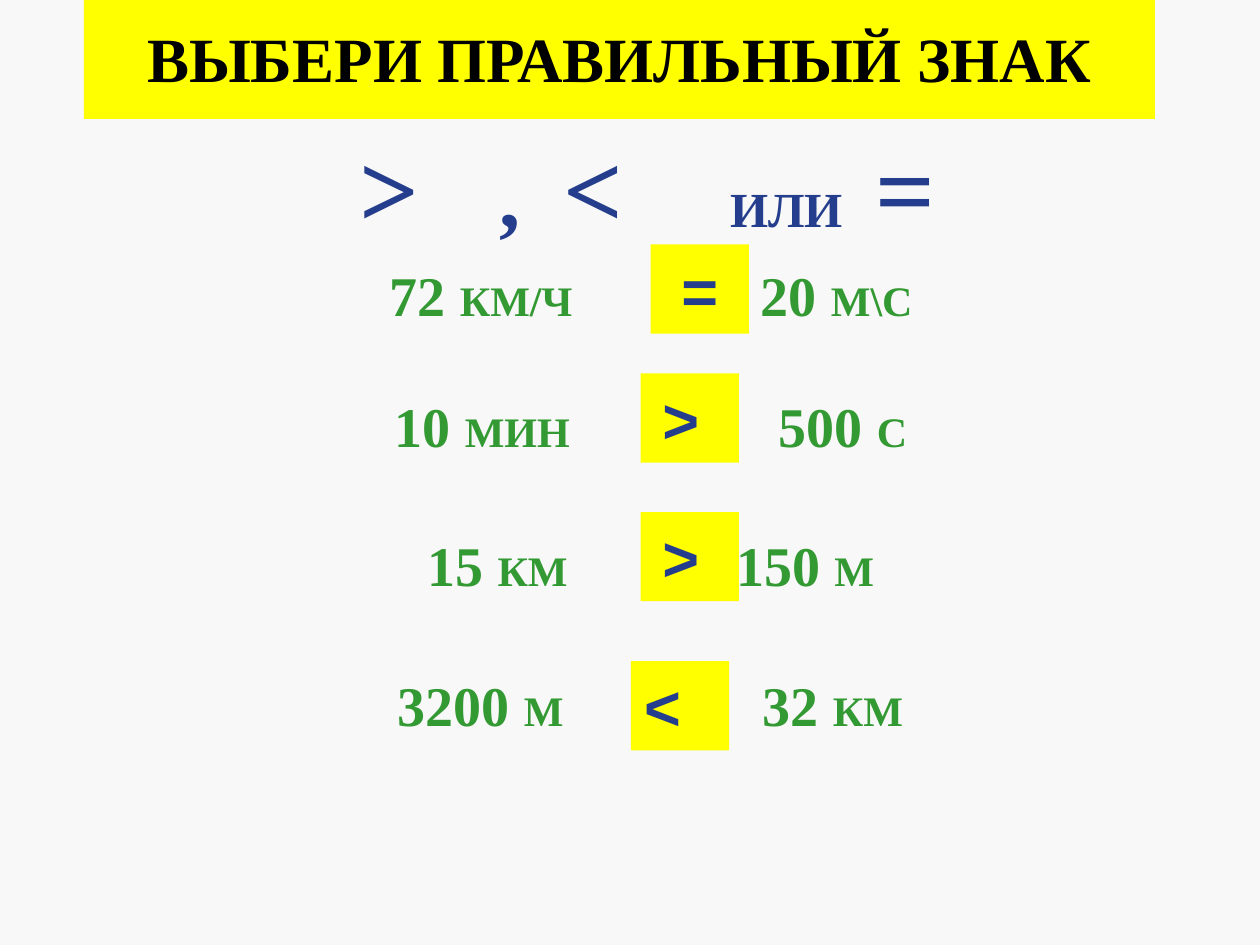
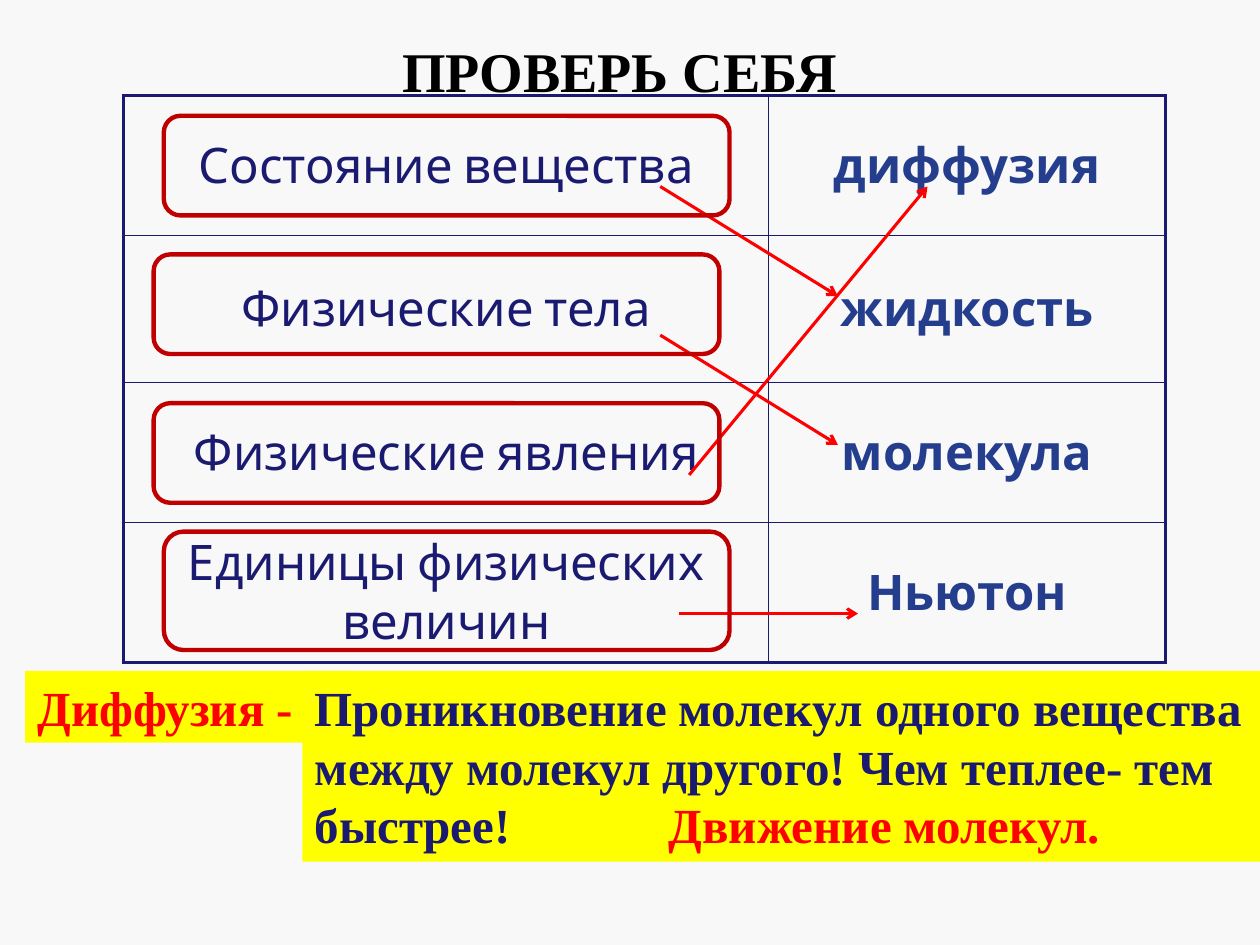
from typing import NamedTuple

from lxml import etree
from pptx import Presentation
from pptx.dml.color import RGBColor
from pptx.enum.shapes import MSO_CONNECTOR, MSO_SHAPE
from pptx.enum.text import MSO_ANCHOR, PP_ALIGN
from pptx.oxml.ns import qn
from pptx.util import Pt

RECT, ROUND = MSO_SHAPE.RECTANGLE, MSO_SHAPE.ROUNDED_RECTANGLE
STRAIGHT = MSO_CONNECTOR.STRAIGHT
LEFT, CENTER = PP_ALIGN.LEFT, PP_ALIGN.CENTER
TOP, MIDDLE = MSO_ANCHOR.TOP, MSO_ANCHOR.MIDDLE

COLORS = {
    "page": "F8F8F8", "band": "FFFF00", "title": "000000", "blue": "243D8C",
    "navy": "1A1A70", "green": "339933", "red": "FF0000", "frame": "C00000",
}
SERIF, SANS, TABLE_FONT = "Times New Roman", "Arial", "Cabin"


class Box(NamedTuple):
    x: float
    y: float
    w: float
    h: float


class Piece(NamedTuple):
    text: str
    size: float
    color: str


class Line(NamedTuple):
    before: float
    tabs: list[float]
    pieces: list[Piece]


class Answer(NamedTuple):
    sign: str
    x: float
    y: float
    shift: float  # moves the sign left of the centre


class Arrow(NamedTuple):
    x1: float
    y1: float
    x2: float
    y2: float


# Shared helpers
def rgb(name: str) -> RGBColor:
    return RGBColor.from_string(COLORS[name])


def style_run(r, size: float, color: str, font: str = SERIF, bold: bool = True) -> None:
    r.font.size, r.font.name, r.font.bold = Pt(size), font, bold
    r.font.color.rgb = rgb(color)


def add_slide(prs):
    s = prs.slides.add_slide(prs.slide_layouts[6])
    s.background.fill.solid()
    s.background.fill.fore_color.rgb = rgb("page")
    return s


def add_box(s, box: Box, fill: str = "", line: str = "", kind=RECT):
    sp = s.shapes.add_shape(kind, *map(Pt, box))
    sp.shadow.inherit = False
    if fill:
        sp.fill.solid()
        sp.fill.fore_color.rgb = rgb(fill)
    else:
        sp.fill.background()
    if line:
        sp.line.color.rgb = rgb(line)
        sp.line.width = Pt(2.5)
    else:
        sp.line.fill.background()
    return sp


def write(sp, piece: Piece, font: str = SERIF, align=CENTER, anchor=MIDDLE):
    tf = sp.text_frame
    tf.word_wrap = True
    tf.vertical_anchor = anchor
    tf.text = piece.text
    p = tf.paragraphs[0]
    p.alignment = align
    style_run(p.runs[0], piece.size, piece.color, font)
    return p


def add_pieces(p, pieces: list[Piece]) -> None:
    for piece in pieces:
        r = p.add_run()
        r.text = piece.text
        style_run(r, piece.size, piece.color)


def set_tabs(p, stops: list[float]) -> None:
    tabs = etree.SubElement(p._p.get_or_add_pPr(), qn("a:tabLst"))
    for stop in stops:
        etree.SubElement(tabs, qn("a:tab"), pos=str(Pt(stop)), algn="l")


def add_arrow(s, arrow: Arrow) -> None:
    c = s.shapes.add_connector(STRAIGHT, *map(Pt, arrow))
    c.line.color.rgb = rgb("red")
    c.line.width = Pt(1.75)
    etree.SubElement(c.line._get_or_add_ln(), qn("a:tailEnd"), type="arrow")
    etree.SubElement(c._element.spPr, qn("a:effectLst"))


def set_border(cell, side: str, width: float) -> None:
    ln = etree.Element(qn(f"a:ln{side}"), w=str(Pt(width)))
    fill = etree.SubElement(ln, qn("a:solidFill"))
    etree.SubElement(fill, qn("a:srgbClr"), val=COLORS["navy"])
    cell._tc.get_or_add_tcPr().insert("LRTB".index(side), ln)


# Slide 1: choose the right sign
def comparison(before: float, tabs: list[float], left: tuple[str, str],
               right: tuple[str, str]) -> Line:
    pieces = []
    for number, unit in (left, right):
        pieces += [Piece(f"\t{number} ", 32, "green"), Piece(unit, 24, "green")]
    return Line(before, tabs, pieces)


SIGNS = [(">", 60), (",", 48), ("<", 60), ("ИЛИ", 28), ("=", 60)]
LINES = [
    Line(0, [132, 212, 249, 344, 427],
         [Piece(f"\t{text}", size, "blue") for text, size in SIGNS]),
    comparison(7, [149.5, 361.5], ("72", "КМ/Ч"), ("20", "М\\С")),
    comparison(36.3, [152.3, 371.7], ("10", "МИН"), ("500", "С")),
    comparison(41.5, [171, 347.5], ("15", "КМ"), ("150", "М")),
    comparison(41.5, [154, 362.6], ("3200", "М"), ("32", "КМ")),
]
ANSWERS = [
    Answer("=", 371.8, 139.6, 0), Answer(">", 366, 213.4, 5),
    Answer(">", 366, 292.6, 5), Answer("<", 360.5, 377.8, 10),
]


def build_signs(prs) -> None:
    s = add_slide(prs)
    band = add_box(s, Box(48, -2, 612, 70), "band")
    write(band, Piece("ВЫБЕРИ ПРАВИЛЬНЫЙ ЗНАК", 36, "title"))

    tf = s.shapes.add_textbox(*map(Pt, Box(66.2, 66.3, 612, 380))).text_frame
    tf.word_wrap = True
    for i, line in enumerate(LINES):
        p = tf.add_paragraph() if i else tf.paragraphs[0]
        p.alignment = LEFT
        p.space_before = Pt(line.before)
        set_tabs(p, line.tabs)
        add_pieces(p, line.pieces)

    for answer in ANSWERS:
        sp = add_box(s, Box(answer.x, answer.y, 56.2, 51), "band")
        write(sp, Piece(answer.sign, 36, "blue"), SANS)
        sp.text_frame.margin_right = Pt(7.2 + 2 * answer.shift)


# Slide 2: match the terms
PAIRS = [
    ("Состояние вещества", "диффузия"),
    ("Физические тела", "жидкость"),
    ("Физические явления", "молекула"),
    ("Единицы физических величин", "Ньютон"),
]
COL_WIDTHS, ROW_HEIGHTS = [368.6, 226.8], [80, 84, 80, 80]
ARROWS = [
    Arrow(377.3, 106.6, 478.8, 169.2), Arrow(377.3, 191.5, 478.8, 254.2),
    Arrow(393.8, 271.4, 530, 106.6), Arrow(388, 350.6, 490.3, 350.6),
]
FRAMES = [(93.6, 66.2, 56.9), (87.8, 145.4, 56.9), (87.8, 230.4, 56.9), (93.6, 303.8, 67.7)]


def add_pairs_table(s) -> None:
    box = Box(70.6, 54.7, sum(COL_WIDTHS), sum(ROW_HEIGHTS))
    table = s.shapes.add_table(len(PAIRS), 2, *map(Pt, box)).table
    table.first_row = table.horz_banding = False
    for col, width in zip(table.columns, COL_WIDTHS):
        col.width = Pt(width)
    for i, pair in enumerate(PAIRS):
        table.rows[i].height = Pt(ROW_HEIGHTS[i])
        for j, text in enumerate(pair):
            cell = table.cell(i, j)
            cell.fill.background()
            cell.vertical_anchor = MIDDLE
            cell.text = text
            p = cell.text_frame.paragraphs[0]
            p.alignment = CENTER
            style_run(p.runs[0], 28, "blue" if j else "navy", TABLE_FONT, bold=j == 1)
            outer = {"L": j == 0, "R": j == 1, "T": i == 0, "B": i == len(PAIRS) - 1}
            for side, is_outer in outer.items():
                set_border(cell, side, 2.25 if is_outer else 1)


def build_matching(prs) -> None:
    s = add_slide(prs)
    title = s.shapes.add_textbox(*map(Pt, Box(48, 2, 612, 75.6)))
    write(title, Piece("ПРОВЕРЬ СЕБЯ", 32, "title"))
    add_pairs_table(s)
    for arrow in ARROWS:
        add_arrow(s, arrow)
    for x, y, h in FRAMES:
        add_box(s, Box(x, y, 323.3, h), line="frame", kind=ROUND)

    # Definition of diffusion
    term = add_box(s, Box(14.4, 383.4, 187.2, 41), "band")
    write(term, Piece("Диффузия -", 28, "red"), align=LEFT, anchor=TOP)
    meaning = add_box(s, Box(172.8, 383.4, 547.2, 109), "band")
    p = write(meaning, Piece("Проникновение молекул одного вещества между молекул "
                             "другого! Чем теплее- тем быстрее!", 28, "navy"),
              align=LEFT, anchor=TOP)
    set_tabs(p, [202.3])
    add_pieces(p, [Piece("\tДвижение молекул.", 28, "red")])


def main() -> None:
    prs = Presentation()
    prs.slide_width, prs.slide_height = Pt(720), Pt(540)
    build_signs(prs)
    build_matching(prs)
    prs.save("out.pptx")


if __name__ == "__main__":
    main()
